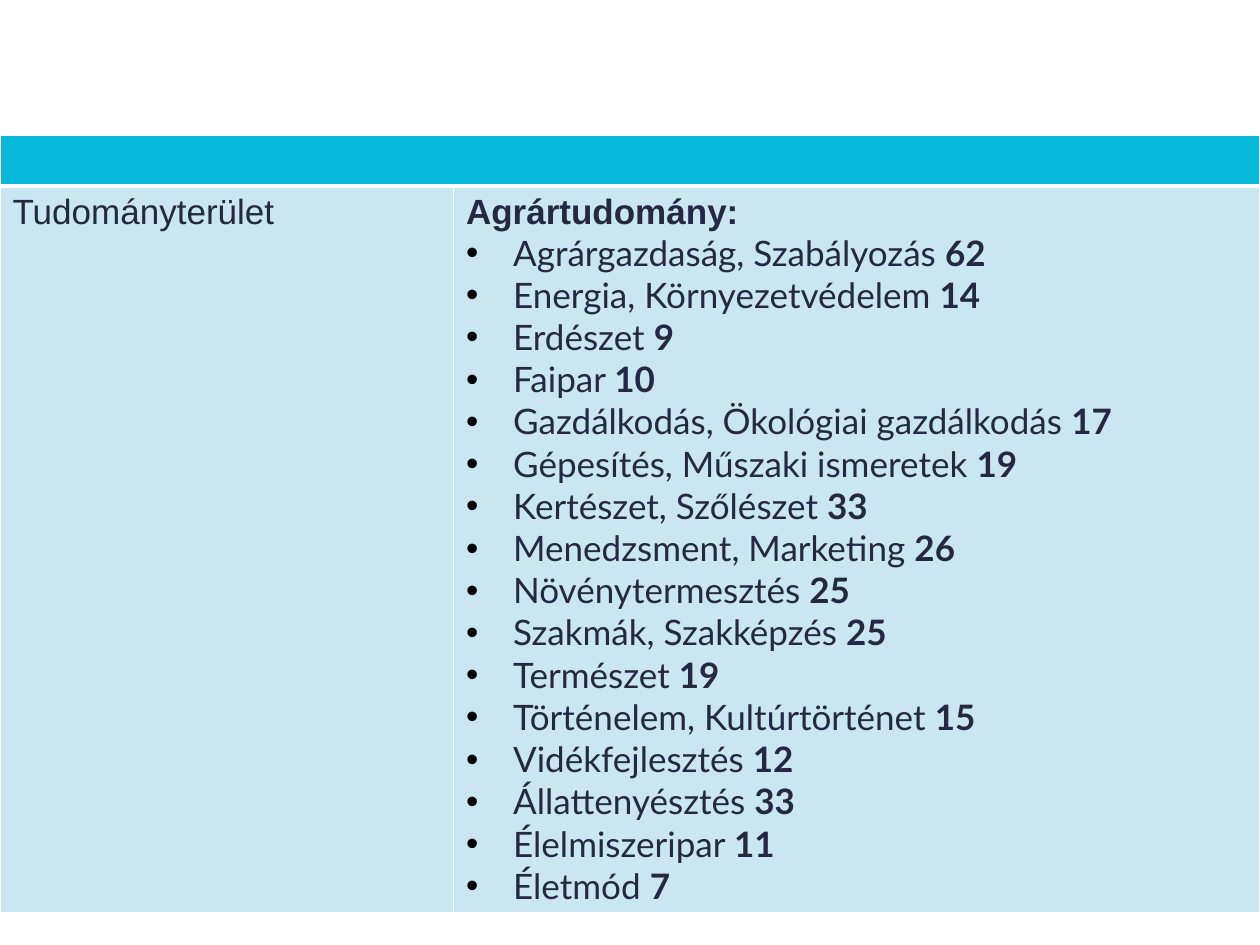
from lxml.etree import SubElement
from pptx import Presentation
from pptx.dml.color import RGBColor
from pptx.oxml.ns import qn
from pptx.util import Cm, Pt

COLORS = {
    "header": "07B9D9",
    "body": "CAE6F1",
    "border": "FFFFFF",
    "label": "242943",
    "text": "242843",
    "bullet": "000000",
}
FIELD_LABEL = "Tudományterület"
SCIENCE = "Agrártudomány:"
TOPICS = [
    ("Agrárgazdaság, Szabályozás", 62),
    ("Energia, Környezetvédelem", 14),
    ("Erdészet", 9),
    ("Faipar", 10),
    ("Gazdálkodás, Ökológiai gazdálkodás", 17),
    ("Gépesítés, Műszaki ismeretek", 19),
    ("Kertészet, Szőlészet", 33),
    ("Menedzsment, Marketing", 26),
    ("Növénytermesztés", 25),
    ("Szakmák, Szakképzés", 25),
    ("Természet", 19),
    ("Történelem, Kultúrtörténet", 15),
    ("Vidékfejlesztés", 12),
    ("Állattenyésztés", 33),
    ("Élelmiszeripar", 11),
    ("Életmód", 7),
]
COLUMN_WIDTHS = [Cm(9.14), Cm(16.26)]
ROW_HEIGHTS = [Cm(1.02), Cm(14.65)]
TABLE_TOP = Cm(2.72)
BULLET_INDENT = Cm(0.95)


def add_span(para, text, color, **formats):
    span = para.add_run()
    span.text = text
    for name, value in {"size": Pt(20), "name": "Arial", "bold": False, **formats}.items():
        setattr(span.font, name, value)
    span.font.color.rgb = RGBColor.from_string(COLORS[color])


def add_bullet(para):
    properties = para._p.get_or_add_pPr()
    properties.set("marL", str(BULLET_INDENT))
    properties.set("indent", str(-BULLET_INDENT))
    bullet_color = SubElement(properties, qn("a:buClr"))
    SubElement(bullet_color, qn("a:srgbClr"), val=COLORS["bullet"])
    SubElement(properties, qn("a:buFont"), typeface="Arial")
    SubElement(properties, qn("a:buChar"), char="•")


def style_cell(cell, fill, **widths):
    """Set the fill and the border widths in points, by side."""
    properties = cell._tc.get_or_add_tcPr()
    for side in "LRTB":
        line = SubElement(properties, qn(f"a:ln{side}"), w=str(Pt(widths.get(side, 1))))
        line_fill = SubElement(line, qn("a:solidFill"))
        SubElement(line_fill, qn("a:srgbClr"), val=COLORS["border"])
    cell.fill.solid()
    cell.fill.fore_color.rgb = RGBColor.from_string(COLORS[fill])


deck = Presentation()
deck.slide_width, deck.slide_height = Cm(25.4), Cm(19.05)
page = deck.slides.add_slide(deck.slide_layouts[6])

table = page.shapes.add_table(
    len(ROW_HEIGHTS), len(COLUMN_WIDTHS), Cm(0), TABLE_TOP, sum(COLUMN_WIDTHS), sum(ROW_HEIGHTS)
).table
table.first_row = table.horz_banding = False
for column, width in zip(table.columns, COLUMN_WIDTHS):
    column.width = width
for row, height in zip(table.rows, ROW_HEIGHTS):
    row.height = height

for header, body in zip(table.rows[0].cells, table.rows[1].cells):
    style_cell(header, "header", B=3)
    style_cell(body, "body", T=3)
table.cell(0, 0).merge(table.cell(0, 1))

label_cell, topic_cell = table.rows[1].cells
add_span(label_cell.text_frame.paragraphs[0], FIELD_LABEL, "label")
frame = topic_cell.text_frame
add_span(frame.paragraphs[0], SCIENCE, "text", bold=True)
for topic, count in TOPICS:
    para = frame.add_paragraph()
    add_bullet(para)
    add_span(para, f"{topic} ", "text", name="Lato")
    add_span(para, str(count), "text", name="Lato", bold=True)

deck.save("out.pptx")
